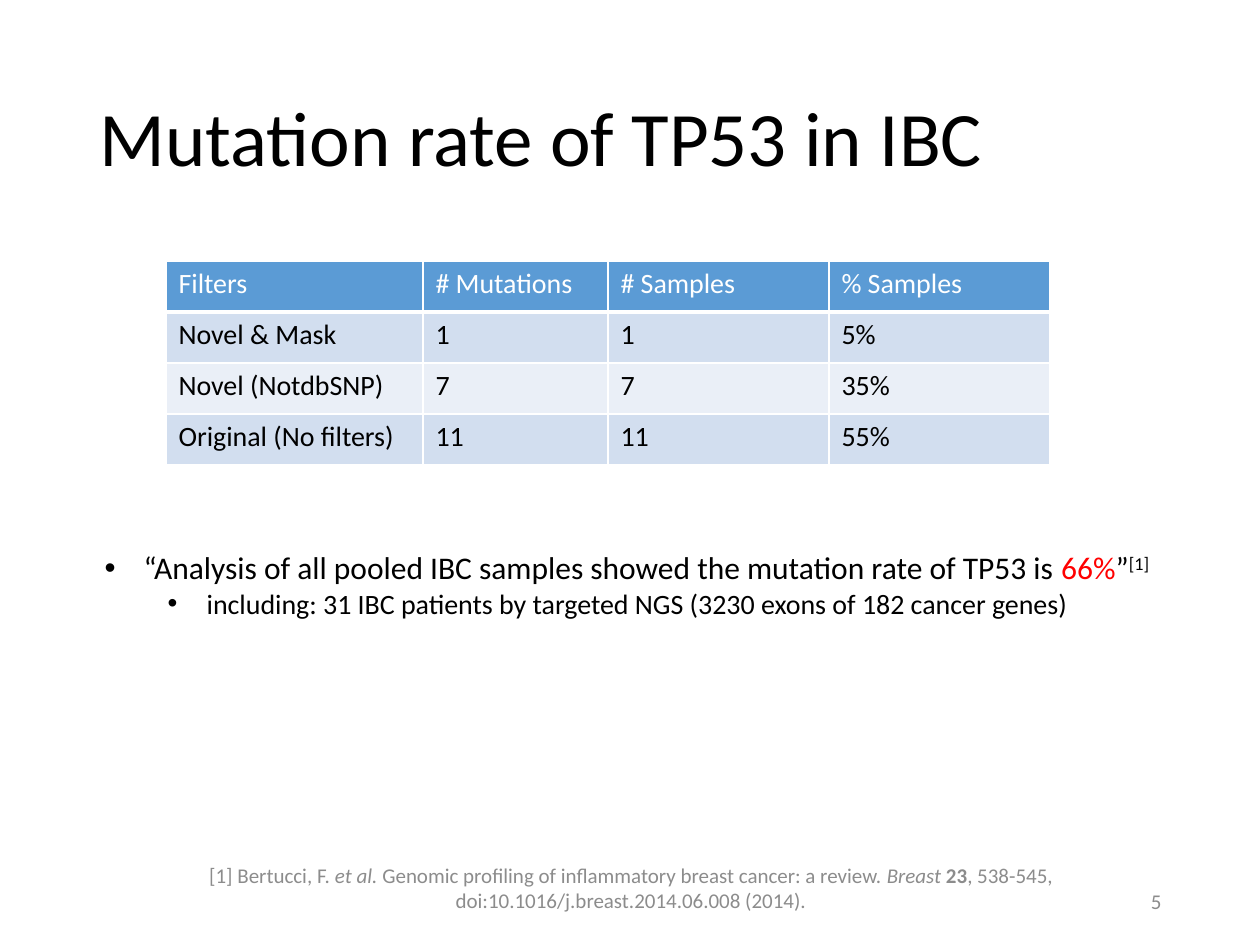
from lxml.etree import SubElement
from pptx import Presentation
from pptx.dml.color import RGBColor
from pptx.enum.text import MSO_ANCHOR as Anchor, MSO_AUTO_SIZE as AutoSize, PP_ALIGN as Align
from pptx.oxml import parse_xml
from pptx.oxml.ns import nsdecls, qn
from pptx.util import Pt

PX = 914400 / 126
BLACK, WHITE, RED, GREY = "000000", "FFFFFF", "FF0000", "8C8C8C"
HEADER_FILL, BANDS = "5B9BD5", ("D2DEEF", "EAEFF7")

TITLE = "Mutation rate of TP53 in IBC"
ROWS = [
    ("Filters", "# Mutations", "# Samples", "% Samples"),
    ("Novel & Mask", "1", "1", "5%"),
    ("Novel (NotdbSNP)", "7", "7", "35%"),
    ("Original (No filters)", "11", "11", "55%"),
]
COLUMN_WIDTHS = (257, 185, 221, 221)
ROW_HEIGHT = 51
FINDINGS = [
    (0, 18, 39, [
        ("“Analysis of all pooled IBC samples showed the mutation rate of TP53 is ", {}),
        ("66%", {"color": RED}),
        ("”", {}),
        ("[1]", {"raised": True}),
    ]),
    (1, 16, 102, [
        ("including: 31 IBC patients by targeted NGS (3230 exons of 182 cancer genes)", {}),
    ]),
]
HANGING = 39
CITATION = [
    ("[1] Bertucci, F.", {}),
    (" et al.", {"italic": True}),
    (" Genomic profiling of inflammatory breast cancer: a review. ", {}),
    ("Breast ", {"italic": True}),
    ("23", {"bold": True}),
    (", 538-545, doi:10.1016/j.breast.2014.06.008 (2014).", {}),
]
PAGE_NUMBER = [("5", {})]


def px(length):
    return round(length * PX)


def rgb(color):
    return RGBColor.from_string(color)


def place(shape, left, top, width, height):
    shape.left, shape.top, shape.width, shape.height = map(px, (left, top, width, height))


def style(run, size, color, bold=False, italic=False, raised=False):
    font = run.font
    font.name, font.size, font.bold, font.italic = "Calibri", Pt(size), bold, italic
    font.color.rgb = rgb(color)
    if raised:
        run._r.get_or_add_rPr().set("baseline", "30000")


def write(paragraph, pieces, size, color):
    for words, look in pieces:
        run = paragraph.add_run()
        run.text = words
        style(run, size, **{"color": color, **look})


def add_bullet(paragraph, indent):
    props = paragraph._p.get_or_add_pPr()
    props.set("marL", str(px(indent)))
    props.set("indent", str(-px(HANGING)))
    SubElement(props, qn("a:buFont")).set("typeface", "Arial")
    SubElement(props, qn("a:buChar")).set("char", "•")


def add_borders(cell, bottom):
    props = cell._tc.get_or_add_tcPr()
    sides = (("L", 1), ("R", 1), ("T", 1), ("B", bottom))
    for position, (side, points) in enumerate(sides):
        props.insert(position, parse_xml(
            f'<a:ln{side} {nsdecls("a")} w="{Pt(points)}"><a:solidFill>'
            f'<a:srgbClr val="{WHITE}"/></a:solidFill></a:ln{side}>'))


def add_footer(slide, box, pieces, align):
    footer = slide.shapes.add_textbox(*map(px, box))
    frame = footer.text_frame
    frame.word_wrap = True
    frame.vertical_anchor = Anchor.MIDDLE
    frame.paragraphs[0].alignment = align
    write(frame.paragraphs[0], pieces, 12, GREY)


def add_rates(slide):
    table = slide.shapes.add_table(
        len(ROWS), len(COLUMN_WIDTHS), px(166), px(261),
        px(sum(COLUMN_WIDTHS)), px(ROW_HEIGHT * len(ROWS))).table
    for column, width in zip(table.columns, COLUMN_WIDTHS):
        column.width = px(width)
    for r, values in enumerate(ROWS):
        header = r == 0
        for c, value in enumerate(values):
            cell = table.cell(r, c)
            cell.fill.solid()
            cell.fill.fore_color.rgb = rgb(HEADER_FILL if header else BANDS[(r - 1) % 2])
            add_borders(cell, 3 if header else 1)
            write(cell.text_frame.paragraphs[0], [(value, {})], 16, WHITE if header else BLACK)


def add_findings(body):
    place(body, 92, 542, 1119, 84)
    frame = body.text_frame
    frame.word_wrap = True
    frame.auto_size = AutoSize.SHAPE_TO_FIT_TEXT
    for number, (level, size, indent, pieces) in enumerate(FINDINGS):
        paragraph = frame.add_paragraph() if number else frame.paragraphs[0]
        paragraph.level = level
        paragraph.space_before = Pt(0)
        add_bullet(paragraph, indent)
        write(paragraph, pieces, size, BLACK)


def main():
    deck = Presentation()
    deck.slide_width, deck.slide_height = px(1260), px(945)
    slide = deck.slides.add_slide(deck.slide_layouts[1])

    title = slide.shapes.title
    place(title, 87, 50, 1086, 183)
    title.text_frame.vertical_anchor = Anchor.MIDDLE
    heading = title.text_frame.paragraphs[0]
    heading.alignment = Align.LEFT
    heading.line_spacing = 0.9
    write(heading, [(TITLE, {})], 44, BLACK)

    add_rates(slide)
    add_findings(slide.placeholders[1])
    add_footer(slide, (173, 863, 916, 50), CITATION, Align.CENTER)
    add_footer(slide, (890, 876, 284, 50), PAGE_NUMBER, Align.RIGHT)
    deck.save("out.pptx")


if __name__ == "__main__":
    main()
